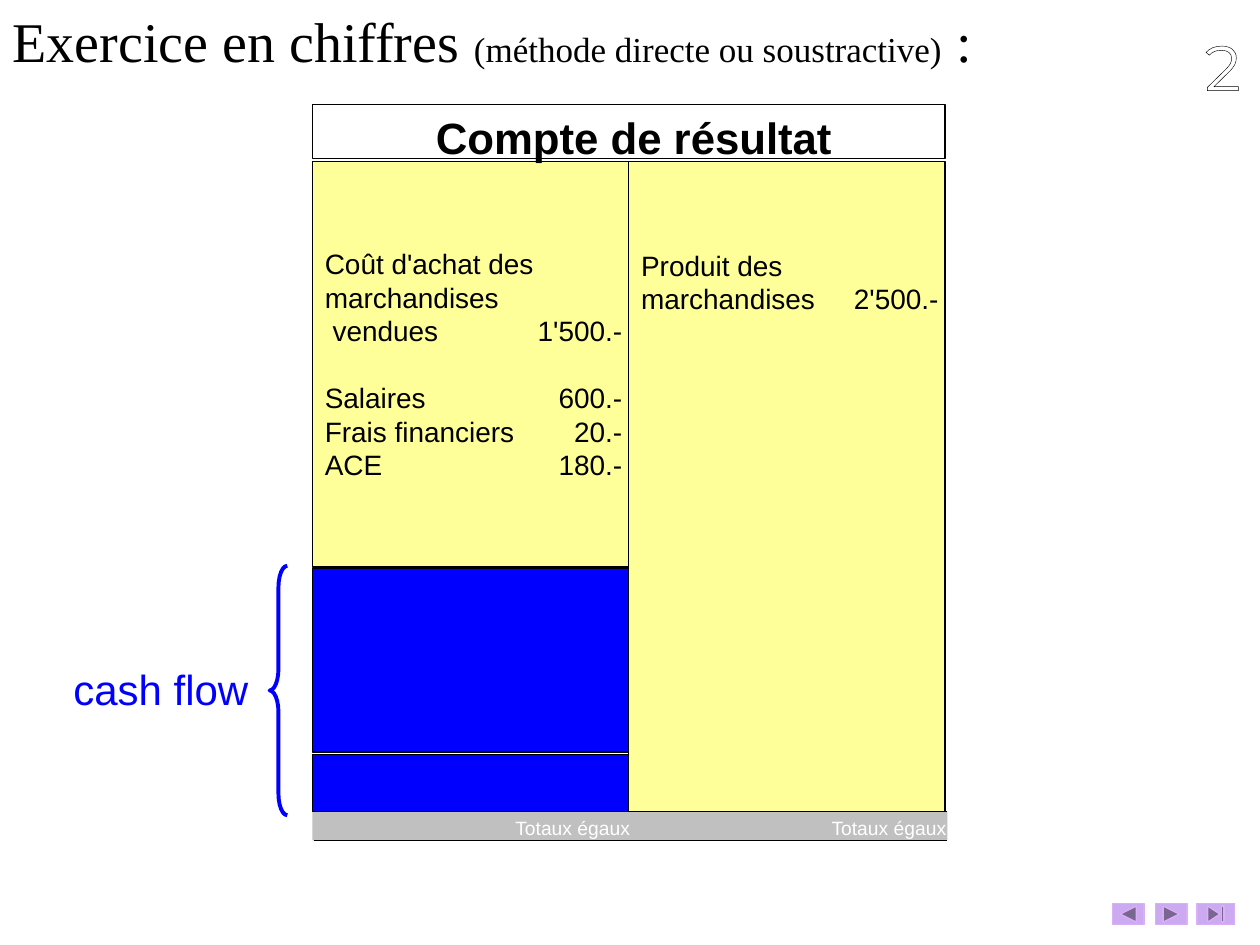
import pptx
import pptx.util
import pptx.dml.color
import pptx.enum.shapes
import pptx.enum.text
import pptx.oxml
import pptx.oxml.ns
from pptx.util import Inches

COLORS = {"black": "000000", "white": "FFFFFF", "yellow": "FFFF99", "blue": "0000FF",
          "gray": "C0C0C0", "button": "CBAAF2", "button_line": "DAAFF5"}
SHAPES = pptx.enum.shapes.MSO_SHAPE
ALIGN = pptx.enum.text.PP_ALIGN
ANCHOR = pptx.enum.text.MSO_ANCHOR

# Content: a tab separates each label from its amount
TITLE = [("Exercice en chiffres ", 32), ("(méthode directe ou soustractive)", 20), (" :", 32)]
EXPENSES = ["Coût d'achat des", "marchandises", " vendues\t1'500.-",
            "Salaires\t600.-", "Frais financiers\t20.-", "ACE\t180.-"]
INCOME = ["Produit des", "marchandises\t2'500.-"]
BUTTONS = [(SHAPES.ACTION_BUTTON_BACK_OR_PREVIOUS, 8.83, 0.25),
           (SHAPES.ACTION_BUTTON_FORWARD_OR_NEXT, 9.17, 0.25),
           (SHAPES.ACTION_BUTTON_END, 9.5, 0.3)]

# Account grid
LEFT, COLUMN = 2.48, 2.51
TOP, BOTTOM = 1.28, 6.44
AMOUNT_TAB = 2.36

presentation = pptx.Presentation()
presentation.slide_width, presentation.slide_height = Inches(10), Inches(7.5)
slide = presentation.slides.add_slide(presentation.slide_layouts[5])


def rgb(name):
    return pptx.dml.color.RGBColor.from_string(COLORS[name])


def set_format(target, values):
    for name, value in values.items():
        setattr(target, name, value)


def set_font(run, size, font="Arial", color="black", bold=False):
    set_format(run.font, {"size": pptx.util.Pt(size), "name": font, "bold": bold})
    run.font.color.rgb = rgb(color)


def set_frame(frame, insets, anchor=ANCHOR.TOP, wrap=True):
    names = ("margin_left", "margin_top", "margin_right", "margin_bottom")
    set_format(frame, dict(zip(names, map(Inches, insets))))
    set_format(frame, {"word_wrap": wrap, "vertical_anchor": anchor,
                       "auto_size": pptx.enum.text.MSO_AUTO_SIZE.NONE})


def add_shape(kind, box, fill=None, line=None, width=0.75):
    shape = slide.shapes.add_shape(kind, *map(Inches, box))
    shape.shadow.inherit = False
    if fill:
        shape.fill.solid()
        shape.fill.fore_color.rgb = rgb(fill)
    else:
        shape.fill.background()
    if line:
        shape.line.color.rgb = rgb(line)
        shape.line.width = pptx.util.Pt(width)
    else:
        shape.line.fill.background()
    return shape


def add_text(box, text, size, align=ALIGN.LEFT, insets=(0, 0, 0, 0), wrap=False, **font):
    frame = slide.shapes.add_textbox(*map(Inches, box)).text_frame
    set_frame(frame, insets, wrap=wrap)
    paragraph = frame.paragraphs[0]
    paragraph.alignment = align
    run = paragraph.add_run()
    run.text = text
    set_font(run, size, **font)
    return run


def add_account(box, lines, insets, anchor, gap_before=None):
    frame = add_shape(SHAPES.RECTANGLE, box, "yellow", "black").text_frame
    set_frame(frame, insets, anchor)
    for index, line in enumerate(lines):
        paragraph = frame.paragraphs[0] if index == 0 else frame.add_paragraph()
        paragraph.alignment = ALIGN.LEFT
        if index == gap_before:
            paragraph.space_before = pptx.util.Pt(19)
        tabs = pptx.oxml.parse_xml(
            f'<a:tabLst {pptx.oxml.ns.nsdecls("a")}>'
            f'<a:tab pos="{Inches(AMOUNT_TAB)}" algn="r"/></a:tabLst>')
        paragraph._p.get_or_add_pPr().append(tabs)
        run = paragraph.add_run()
        run.text = line
        set_font(run, 16)


# Title
title = slide.shapes.title
set_format(title, dict(zip(("left", "top", "width", "height"),
                           map(Inches, (0, 0, 8.17, 0.63)))))
set_frame(title.text_frame, (0.1, 0.05, 0.1, 0.05))
title.text_frame.paragraphs[0].alignment = ALIGN.LEFT
for text, size in TITLE:
    run = title.text_frame.paragraphs[0].add_run()
    run.text = text
    set_font(run, size, "Times New Roman")

# Navigation buttons
for kind, left, width in BUTTONS:
    add_shape(kind, (left, 7.17, width, 0.17), "button", "button_line")

# Two sides of the account
add_account((LEFT, TOP, COLUMN, 3.22), EXPENSES, (0.1, 0.05, 0.02, 0.05),
            ANCHOR.MIDDLE, gap_before=3)
add_account((LEFT + COLUMN, TOP, COLUMN, 5.18), INCOME, (0.1, 0.69, 0.02, 0.05), ANCHOR.TOP)

# Outlined slide number
number = add_text((9.58, 0.17, 0.25, 0.5), "2", 36, ALIGN.CENTER, (0, 0.05, 0, 0.05),
                  font="Montserrat", color="white")
number.font._element.insert(0, pptx.oxml.parse_xml(
    f'<a:ln {pptx.oxml.ns.nsdecls("a")} w="9525"><a:solidFill>'
    f'<a:srgbClr val="{COLORS["black"]}"/></a:solidFill></a:ln>'))

# Account heading
add_text((3.46, 0.88, 3.15, 0.42), "Compte de résultat", 25, bold=True)
add_shape(SHAPES.RECTANGLE, (LEFT, 0.83, 2 * COLUMN, 0.43), line="black")

# Totals band with a rule above and below
add_shape(SHAPES.RECTANGLE, (LEFT, BOTTOM, 2 * COLUMN + 0.02, 0.23), "gray")
for column in range(2):
    add_text((4.09 + column * COLUMN, 6.48, 0.93, 0.18), "Totaux égaux", 11, color="white")
for y in (BOTTOM, 6.67):
    rule = slide.shapes.add_connector(
        pptx.enum.shapes.MSO_CONNECTOR.STRAIGHT,
        *map(Inches, (LEFT + 0.01, y, LEFT + 2 * COLUMN + 0.02, y)))
    rule.line.color.rgb = rgb("black")
    rule.line.width = pptx.util.Pt(1)
    rule._element.spPr.append(pptx.oxml.parse_xml(
        f'<a:effectLst {pptx.oxml.ns.nsdecls("a")}/>'))

# Cash flow blocks, brace and label
for top, height in ((4.51, 1.46), (5.99, 0.45)):
    add_shape(SHAPES.RECTANGLE, (LEFT, top, COLUMN, height), "blue", "black")
brace = add_shape(SHAPES.LEFT_BRACE, (2.14, 4.49, 0.14, 1.98), line="blue", width=2.25)
brace.adjustments[0] = 1.22
add_text((0.21, 5.22, 1.86, 0.5), "cash flow", 24, ALIGN.RIGHT, (0.1, 0.05, 0.1, 0.05),
         wrap=True, color="blue")

presentation.save("out.pptx")
